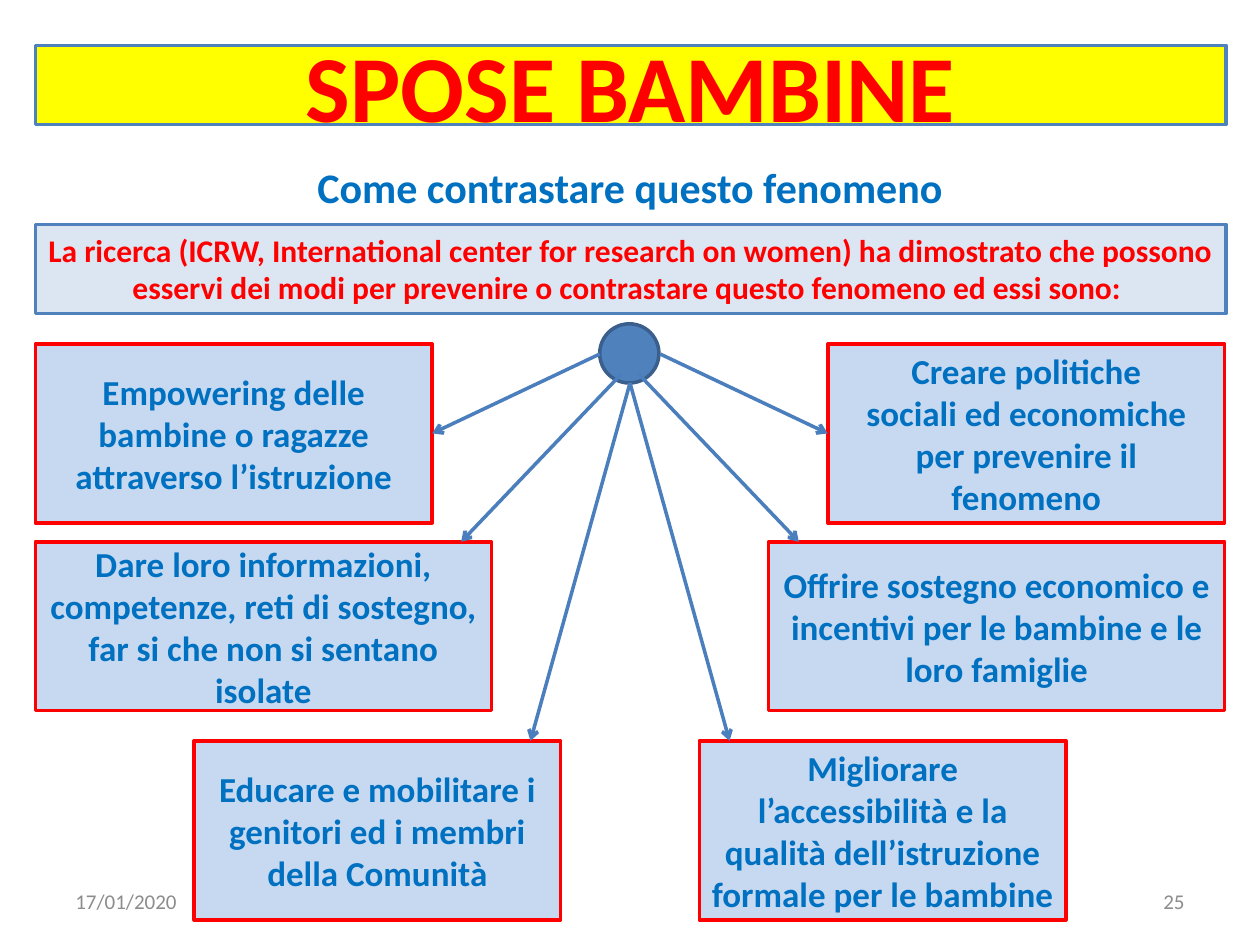
from pptx import Presentation
from pptx.dml.color import RGBColor
from pptx.enum.shapes import MSO_CONNECTOR, MSO_SHAPE
from pptx.enum.text import MSO_ANCHOR, MSO_AUTO_SIZE, PP_ALIGN
from pptx.oxml.ns import qn
from pptx.util import Inches, Pt
from lxml import etree

LINE = MSO_CONNECTOR.STRAIGHT
RECT, OVAL = MSO_SHAPE.RECTANGLE, MSO_SHAPE.OVAL
TOP, MID = MSO_ANCHOR.TOP, MSO_ANCHOR.MIDDLE
FIXED = MSO_AUTO_SIZE.NONE
LEFT, CENTER, RIGHT = PP_ALIGN.LEFT, PP_ALIGN.CENTER, PP_ALIGN.RIGHT

RED = RGBColor(0xFF, 0x00, 0x00)
YELLOW = RGBColor(0xFF, 0xFF, 0x00)
BLUE = RGBColor(0x00, 0x70, 0xC0)
STEEL = RGBColor(0x4F, 0x81, 0xBD)
NAVY = RGBColor(0x3A, 0x5F, 0x8C)
ARROW = RGBColor(0x4B, 0x7E, 0xBC)
PALE = RGBColor(0xDC, 0xE6, 0xF2)
SKY = RGBColor(0xC6, 0xD9, 0xF1)
GRAY = RGBColor(0x8C, 0x8C, 0x8C)

WIDE = 10
EDGE = 0.28
HUB = (4.76, 2.57, 0.47, 0.47)

ROWS = [
    ((EDGE, 2.73, 3.15, 1.42), (4.76, 2.81), (3.43, 3.44),
     "Empowering delle bambine o ragazze attraverso l’istruzione",
     "Creare politiche sociali\u00a0ed economiche per prevenire il fenomeno"),
    ((EDGE, 4.3, 3.62, 1.34), (4.93, 2.97), (3.66, 4.3),
     "Dare loro informazioni, competenze, reti di sostegno, "
     "far si che non si sentano isolate",
     "Offrire sostegno economico e incentivi per le bambine e le loro famiglie"),
    ((1.54, 5.88, 2.91, 1.42), (5, 3.04), (4.21, 5.88),
     "Educare e mobilitare i genitori ed i membri della Comunità",
     "Migliorare l’accessibilità e la qualità dell’istruzione "
     "formale per le bambine"),
]


def write(shape, text, size=20, color=BLUE, bold=True, align=CENTER, anchor=MID):
    frame = shape.text_frame
    frame.word_wrap = True
    frame.auto_size = FIXED
    frame.vertical_anchor = anchor
    para = frame.paragraphs[0]
    para.alignment = align
    run = para.add_run()
    run.text = text
    font = run.font
    font.name, font.size, font.bold = "Calibri", Pt(size), bold
    font.color.rgb = color


def paint(shape, fill, line):
    shape.fill.solid()
    shape.fill.fore_color.rgb = fill
    shape.line.color.rgb = line
    shape.line.width = Pt(2)


def place(shape, box):
    shape.left, shape.top, shape.width, shape.height = map(Inches, box)


def draw(slide, kind, box, fill, line):
    shape = slide.shapes.add_shape(kind, *map(Inches, box))
    shape.shadow.inherit = False
    paint(shape, fill, line)
    return shape


def label(slide, box, text, **style):
    write(slide.shapes.add_textbox(*map(Inches, box)), text, **style)


def arrow(slide, start, end):
    link = slide.shapes.add_connector(LINE, *map(Inches, start + end))
    link.line.color.rgb = ARROW
    link.line.width = Pt(2)
    tip = etree.SubElement(link.line._get_or_add_ln(), qn("a:tailEnd"))
    tip.set("type", "arrow")
    etree.SubElement(link._element.spPr, qn("a:effectLst"))


def header(slide, box):
    left, top, width, _ = box
    title, intro = slide.shapes.title, slide.placeholders[1]
    place(title, (left, top, width, 0.63))
    paint(title, YELLOW, STEEL)
    write(title, "SPOSE BAMBINE", size=54, color=RED)
    label(slide, (1.85, top + 0.87, 6.3, 0.5),
          "Come contrastare questo fenomeno", size=24, anchor=TOP)
    place(intro, (left, top + 1.42, width, 0.71))
    paint(intro, PALE, STEEL)
    write(intro, "La ricerca\u00a0(ICRW, International center for research on women)"
          "\u00a0ha dimostrato che possono esservi dei modi per prevenire o "
          "contrastare questo fenomeno ed essi sono: ",
          size=18, color=RED, anchor=TOP)


def footer(slide, box):
    left, top, width, height = box
    style = dict(size=12, color=GRAY, bold=False)
    label(slide, (left, top, 2.33, height), "17/01/2020", align=LEFT, **style)
    label(slide, (left + width - 2.33, top, 2.33, height), "25",
          align=RIGHT, **style)


def flip(point, width=0):
    return (WIDE - point[0] - width, point[1])


def fan(slide, hub):
    for box, _, _, near, far in ROWS:
        twin = flip(box, box[2]) + box[2:]
        for spot, text in ((box, near), (twin, far)):
            write(draw(slide, RECT, spot, SKY, RED), text)
    draw(slide, OVAL, hub, STEEL, NAVY)
    for _, start, end, _, _ in ROWS:
        arrow(slide, start, end)
        arrow(slide, flip(start), flip(end))


def main():
    deck = Presentation()
    deck.slide_width, deck.slide_height = Inches(WIDE), Inches(7.5)
    slide = deck.slides.add_slide(deck.slide_layouts[0])
    header(slide, (EDGE, 0.36, 9.45, 2.13))
    footer(slide, (0.5, 6.95, 9, 0.4))
    fan(slide, HUB)
    deck.save("out.pptx")


if __name__ == "__main__":
    main()
